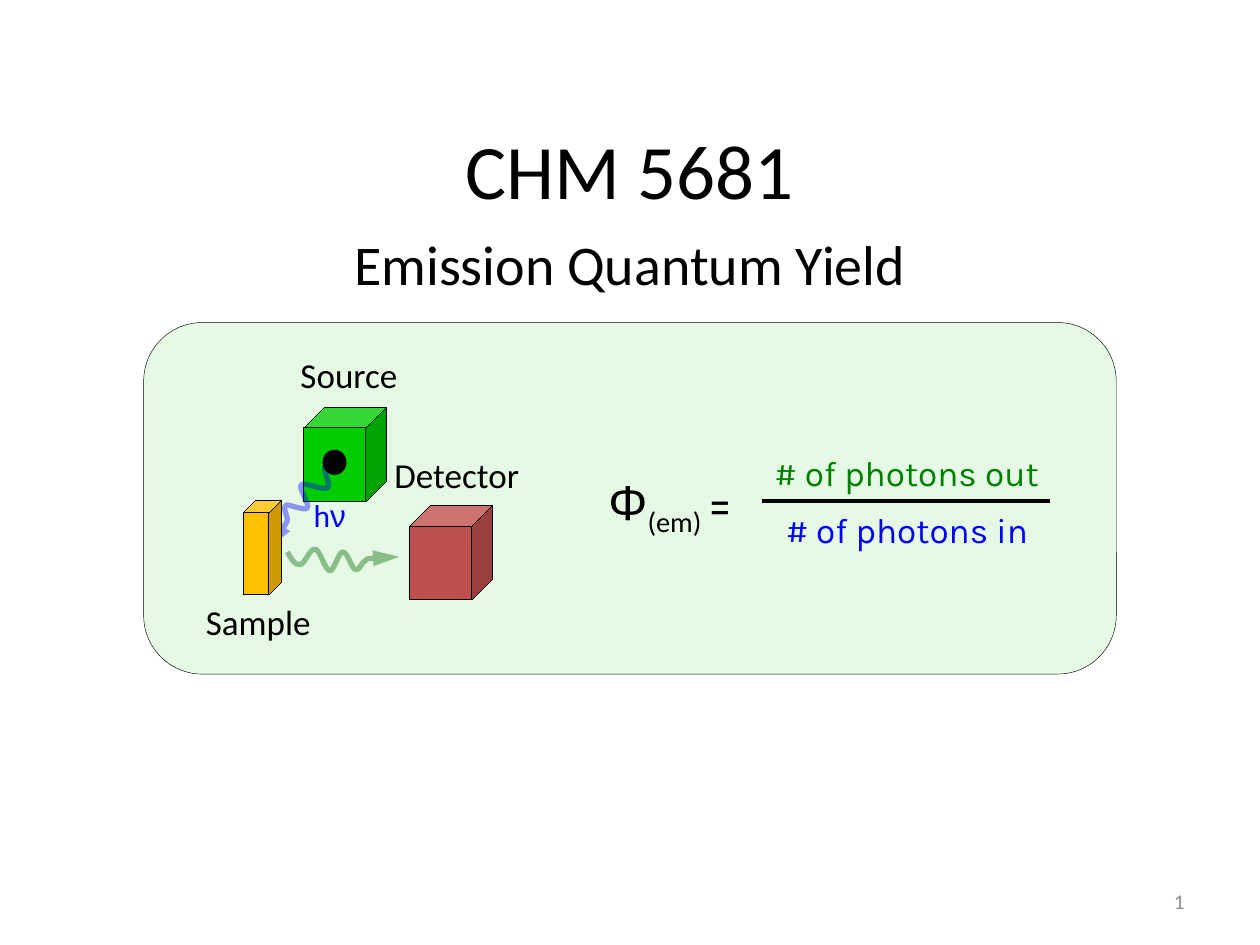
"""Build the title slide of a lecture on emission quantum yield."""
from dataclasses import dataclass
from typing import Optional

from lxml.etree import SubElement
from pptx import Presentation
from pptx.dml.color import RGBColor
from pptx.enum.shapes import MSO_CONNECTOR as Connector, MSO_SHAPE as Preset
from pptx.enum.text import MSO_ANCHOR as Anchor, PP_ALIGN as Align
from pptx.oxml.ns import qn
from pptx.util import Pt

BLACK = RGBColor(0x00, 0x00, 0x00)
GRAY = RGBColor(0x8C, 0x8C, 0x8C)
GREEN = RGBColor(0x00, 0xCC, 0x00)
TEXT_GREEN = RGBColor(0x00, 0x80, 0x00)
WAVE_GREEN = RGBColor(0x00, 0x66, 0x00)
BLUE = RGBColor(0x00, 0x00, 0xFF)
RED = RGBColor(0xC0, 0x50, 0x4D)
AMBER = RGBColor(0xFF, 0xC0, 0x00)


@dataclass(frozen=True)
class Run:
    text: str
    font: str = "Calibri"
    baseline: int = 0


@dataclass(frozen=True)
class Label:
    box: tuple[float, float, float, float]
    runs: tuple[Run, ...]
    size: float = 20
    color: RGBColor = BLACK
    align: Align = Align.CENTER
    anchor: Anchor = Anchor.TOP
    wrap: bool = True


@dataclass(frozen=True)
class Solid:
    preset: Preset
    box: tuple[float, float, float, float]
    fill: RGBColor
    line_width: Optional[float] = 0
    adjustment: Optional[float] = None
    opacity: int = 100


@dataclass(frozen=True)
class Wave:
    color: RGBColor
    points: tuple[tuple[float, float], ...]


PANEL = Solid(Preset.ROUNDED_RECTANGLE, (82.1, 184.3, 555.8, 200.9), GREEN, 0.25, opacity=10)
SOURCE = Solid(Preset.CUBE, (173.5, 232.6, 47.5, 54), GREEN)
DETECTOR = Solid(Preset.CUBE, (234, 288.7, 47.5, 54), RED)
APERTURE = Solid(Preset.OVAL, (184.3, 257, 13.7, 14.4), BLACK, None)
SAMPLE = Solid(Preset.CUBE, (139, 285.8, 21.6, 54), AMBER, adjustment=0.32)

LABELS = (
    Label((54, 38.2, 612, 115.9), (Run("CHM 5681"),), 44, anchor=Anchor.MIDDLE),
    Label((108, 127.4, 504, 51.1), (Run("Emission Quantum Yield"),), 32),
    Label((159.1, 198.7, 80.6, 31.7), (Run("Source"),)),
    Label((205.9, 255.6, 110.2, 31.7), (Run("Detector"),)),
    Label((100.1, 339.8, 95, 31.7), (Run("Sample"),)),
    Label((172.1, 280.1, 36, 28.8), (Run("h"), Run("ν", "Arial")), 18, BLUE, Align.LEFT),
    Label((340.6, 265.7, 98, 41),
          (Run("Φ", "Arial"), Run("(em) ", baseline=-25), Run("=", "Karla")),
          28, align=Align.LEFT, wrap=False),
    Label((435.6, 254.2, 168, 31.7), (Run("# of photons out", "Karla"),),
          color=TEXT_GREEN, align=Align.LEFT, wrap=False),
    Label((442.1, 287.3, 158, 31.7), (Run("# of photons in", "Karla"),),
          color=BLUE, align=Align.LEFT, wrap=False),
    Label((516.2, 500.4, 167.8, 28.8), (Run("1"),), 12, GRAY, Align.RIGHT, Anchor.MIDDLE),
)

WAVES = (
    Wave(BLUE, (
        (153.4, 313.2), (153.4, 313.2), (160.6, 303.1), (162.7, 300.2),
        (164.2, 297.4), (164.2, 298.8), (164.2, 296.6),
        (164.2, 294.5), (161.3, 290.2), (163.4, 288.7),
        (165.6, 288), (174.2, 292.3), (175.7, 290.2),
        (177.1, 288), (170.6, 279.4), (172.1, 277.2),
        (174.2, 275), (185, 280.8), (187.2, 278.6),
        (189.4, 277.2), (184.3, 268.6), (185.8, 266.4),
        (187.2, 264.2), (191.5, 264.2), (195.8, 265))),
    Wave(WAVE_GREEN, (
        (228.2, 318.2), (228.2, 318.2), (215.3, 319), (212.4, 319),
        (208.8, 319.7), (210.2, 319), (208.8, 320.4),
        (206.6, 321.1), (205.2, 326.9), (203, 325.4),
        (200.9, 324.7), (198.7, 315.4), (195.8, 315.4),
        (193.7, 315.4), (190.8, 326.2), (188.6, 326.2),
        (185.8, 326.2), (182.9, 313.9), (180, 313.9),
        (177.1, 313.2), (174.2, 322.6), (171.4, 322.6),
        (168.5, 323.3), (166.3, 319), (164.2, 315.4))),
)


def set_opacity(properties, percent: int) -> None:
    color = next(properties.iter(qn("a:srgbClr")))
    SubElement(color, qn("a:alpha"), val=str(percent * 1000))


def add_solid(slide, solid: Solid) -> None:
    shape = slide.shapes.add_shape(solid.preset, *map(Pt, solid.box))
    shape.shadow.inherit = False
    if solid.adjustment is not None:
        shape.adjustments[0] = solid.adjustment
    shape.fill.solid()
    shape.fill.fore_color.rgb = solid.fill
    if solid.opacity < 100:
        set_opacity(shape._element.spPr, solid.opacity)
    if solid.line_width is None:
        shape.line.fill.background()
    else:
        shape.line.color.rgb = BLACK
        shape.line._get_or_add_ln().set("w", str(int(Pt(solid.line_width))))


def add_label(slide, label: Label) -> None:
    frame = slide.shapes.add_textbox(*map(Pt, label.box)).text_frame
    frame.word_wrap = label.wrap
    frame.vertical_anchor = label.anchor
    paragraph = frame.paragraphs[0]
    paragraph.alignment = label.align
    for part in label.runs:
        run = paragraph.add_run()
        run.text = part.text
        run.font.name = part.font
        run.font.size = Pt(label.size)
        run.font.color.rgb = label.color
        if part.baseline:
            run._r.get_or_add_rPr().set("baseline", str(part.baseline * 1000))


def add_wave(slide, wave: Wave) -> None:
    start, *controls = [(Pt(x), Pt(y)) for x, y in wave.points]
    builder = slide.shapes.build_freeform(*start)
    builder.add_line_segments(controls, close=False)
    shape = builder.convert_to_shape()
    shape.shadow.inherit = False
    shape.fill.background()
    outline = next(shape._element.iter(qn("a:path")))
    segments = outline.findall(qn("a:lnTo"))
    for first in range(0, len(segments), 3):
        curve = SubElement(outline, qn("a:cubicBezTo"))
        for segment in segments[first:first + 3]:
            curve.append(segment[0])
            outline.remove(segment)
    shape.line.color.rgb = wave.color
    shape.line.width = Pt(3)
    line = shape.line._get_or_add_ln()
    set_opacity(line, 40)
    SubElement(line, qn("a:headEnd"), type="triangle", w="med", len="lg")


def add_fraction_bar(slide) -> None:
    bar = slide.shapes.add_connector(
        Connector.STRAIGHT, Pt(599.8), Pt(286.4), Pt(435.6), Pt(286.4))
    bar.line.color.rgb = BLACK
    bar.line.width = Pt(2.25)
    SubElement(bar._element.spPr, qn("a:effectLst"))


def main() -> None:
    presentation = Presentation()
    presentation.slide_width, presentation.slide_height = Pt(720), Pt(540)
    slide = presentation.slides.add_slide(presentation.slide_layouts[6])
    for solid in (PANEL, SOURCE, DETECTOR):
        add_solid(slide, solid)
    for label in LABELS:
        add_label(slide, label)
    for wave in WAVES:
        add_wave(slide, wave)
    for solid in (APERTURE, SAMPLE):
        add_solid(slide, solid)
    add_fraction_bar(slide)
    presentation.save("out.pptx")


if __name__ == "__main__":
    main()
